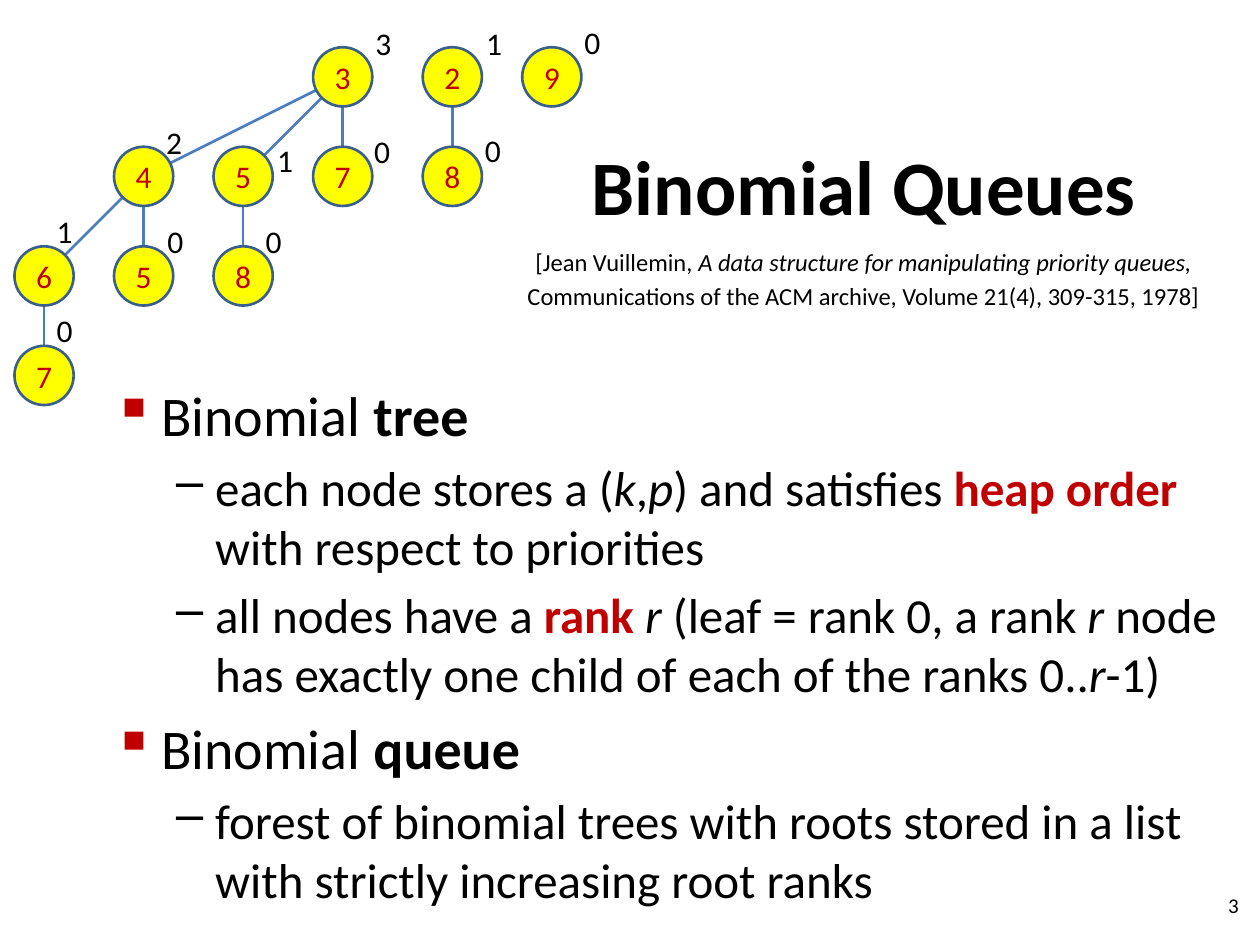
from collections import namedtuple
from dataclasses import dataclass

from lxml import etree
from pptx import Presentation
from pptx.dml.color import RGBColor
from pptx.enum.shapes import MSO_CONNECTOR, MSO_SHAPE
from pptx.enum.text import MSO_ANCHOR, PP_ALIGN
from pptx.oxml.ns import qn
from pptx.util import Inches, Pt

CIRCLE = MSO_SHAPE.OVAL
STRAIGHT = MSO_CONNECTOR.STRAIGHT
TOP, MIDDLE = MSO_ANCHOR.TOP, MSO_ANCHOR.MIDDLE
LEFT, CENTER, RIGHT = PP_ALIGN.LEFT, PP_ALIGN.CENTER, PP_ALIGN.RIGHT


@dataclass(frozen=True)
class Theme:
    font: str = "Calibri"
    ink: str = "000000"
    accent: str = "C00000"
    node_fill: str = "FFFF00"
    node_line: str = "3A5F8C"
    edge: str = "4B7EBC"
    stroke: float = 1.5
    title: int = 44
    body: tuple = (32, 28)
    small: int = 18
    citation: int = 14
    footer: int = 12


THEME = Theme()

# Tree grid: centre of the first cell, pitch, and extra room between trees
GRID_LEFT, GRID_TOP, PITCH, TREE_GAP = 0.35, 0.61, 0.79, 0.08
NODE_SIZE = 0.47
LABEL_SIZE = (0.31, 0.4)

# shift: from the node's centre to the corner of its rank label
Node = namedtuple("Node", "key rank column row parent shift")
SECOND_TREE = 4 + TREE_GAP / PITCH
NODES = {
    "root3": Node("3", 3, 3, 0, None, (0.16, -0.47)),
    "four": Node("4", 2, 1, 1, "root3", (0.08, -0.47)),
    "five": Node("5", 1, 2, 1, "root3", (0.17, -0.33)),
    "seven": Node("7", 0, 3, 1, "root3", (0.15, -0.4)),
    "six": Node("6", 1, 0, 2, "four", (0, -0.56)),
    "four_leaf": Node("5", 0, 1, 2, "four", (0.09, -0.48)),
    "five_leaf": Node("8", 0, 2, 2, "five", (0.08, -0.48)),
    "six_leaf": Node("7", 0, 0, 3, "six", (0, -0.56)),
    "root2": Node("2", 1, SECOND_TREE, 0, None, (0.17, -0.47)),
    "eight": Node("8", 0, SECOND_TREE, 1, "root2", (0.16, -0.41)),
    "root9": Node("9", 0, SECOND_TREE + 1, 0, None, (0.16, -0.48)),
}

# Each run is (text, style): b bold, i italic, a accent colour
CITATION = [
    [("[Jean Vuillemin, ", ""),
     ("A data structure for manipulating priority queues,", "i")],
    [("Communications of the ACM archive, Volume 21(4), 309-315, 1978]", "")],
]
BODY = [
    (0, [("Binomial ", ""), ("tree", "b")]),
    (1, [("each node stores a (", ""), ("k", "i"), (",", ""), ("p", "i"),
         (") and satisfies ", ""), ("heap order ", "ba"),
         ("with respect to priorities", "")]),
    (1, [("all nodes have a ", ""), ("rank ", "ba"), ("r ", "i"),
         ("(leaf = rank 0, a rank ", ""), ("r", "i"),
         (" node has exactly one child of each of the ranks 0..", ""),
         ("r", "i"), ("-1)", "")]),
    (0, [("Binomial ", ""), ("queue", "b")]),
    (1, [("forest of binomial trees with roots stored in a list "
          "with strictly increasing root ranks", "")]),
]
# Per level: bullet, its colour, left margin, hanging indent
BULLETS = [("▪", THEME.accent, 0.38, 0.38), ("–", THEME.ink, 0.81, 0.31)]


def color(value):
    return RGBColor.from_string(value)


def center(node):
    return GRID_LEFT + node.column * PITCH, GRID_TOP + node.row * PITCH


def write_para(para, runs, size, align=LEFT, tint=THEME.ink):
    para.alignment = align
    para.font.name, para.font.size = THEME.font, Pt(size)
    para.font.color.rgb = color(tint)
    for text, style in runs:
        span = para.add_run()
        span.text = text
        if "b" in style:
            span.font.bold = True
        if "i" in style:
            span.font.italic = True
        # Runs carry the colour themselves so that it always shows
        span.font.color.rgb = color(THEME.accent if "a" in style else tint)
        span.font.size, span.font.name = Pt(size), THEME.font


def add_text(page, place, paras, size, align=LEFT, anchor=TOP, wrap=True):
    box = page.shapes.add_textbox(*map(Inches, place))
    frame = box.text_frame
    frame.word_wrap, frame.vertical_anchor = wrap, anchor
    for index, runs in enumerate(paras):
        para = frame.add_paragraph() if index else frame.paragraphs[0]
        write_para(para, runs, size, align)
    return frame


def set_spacing(para):
    """Space before, as 20% of the line."""
    before = etree.SubElement(para._p.get_or_add_pPr(), qn("a:spcBef"))
    etree.SubElement(before, qn("a:spcPct"), val="20000")


def set_bullet(para, level):
    mark, tint, margin, hang = BULLETS[level]
    para.level = level
    props = para._p.get_or_add_pPr()
    props.set("marL", str(Inches(margin)))
    props.set("indent", str(-Inches(hang)))
    set_spacing(para)
    mark_color = etree.SubElement(props, qn("a:buClr"))
    etree.SubElement(mark_color, qn("a:srgbClr"), val=tint)
    etree.SubElement(props, qn("a:buChar"), char=mark)


def add_body(page, place):
    box = page.shapes.add_textbox(*map(Inches, place))
    frame = box.text_frame
    frame.word_wrap = True
    for index, (level, runs) in enumerate(BODY):
        para = frame.add_paragraph() if index else frame.paragraphs[0]
        set_bullet(para, level)
        write_para(para, runs, THEME.body[level])


def add_edge(page, child, parent):
    ends = map(Inches, center(child) + center(parent))
    edge = page.shapes.add_connector(STRAIGHT, *ends)
    edge.line.color.rgb, edge.line.width = color(THEME.edge), Pt(THEME.stroke)
    etree.SubElement(edge._element.spPr, qn("a:effectLst"))


def add_node(page, node):
    corner = [middle - NODE_SIZE / 2 for middle in center(node)]
    circle = page.shapes.add_shape(
        CIRCLE, *map(Inches, (*corner, NODE_SIZE, NODE_SIZE)))
    circle.shadow.inherit = False
    circle.fill.solid()
    circle.fill.fore_color.rgb = color(THEME.node_fill)
    circle.line.color.rgb = color(THEME.node_line)
    circle.line.width = Pt(THEME.stroke)
    frame = circle.text_frame
    frame.margin_left = frame.margin_right = 0
    frame.margin_top = frame.margin_bottom = 0
    frame.vertical_anchor = MIDDLE
    write_para(frame.paragraphs[0], [(node.key, "")], THEME.small, CENTER,
               THEME.accent)


def add_rank(page, node):
    corner = [middle + move for middle, move in zip(center(node), node.shift)]
    add_text(page, (*corner, *LABEL_SIZE), [[(str(node.rank), "")]],
             THEME.small, wrap=False)


def main():
    deck = Presentation()
    deck.slide_width, deck.slide_height = Inches(10), Inches(7.5)
    page = deck.slides.add_slide(deck.slide_layouts[6])

    # Title, body and citation
    add_text(page, (2.36, 0.84, 9, 1.25), [[("Binomial Queues", "b")]],
             THEME.title, CENTER, MIDDLE)
    add_body(page, (0.8, 2.97, 9, 4.95))
    citation = add_text(page, (2.09, 1.91, 9.53, 0.74), CITATION,
                        THEME.citation, CENTER)
    for para in citation.paragraphs:
        set_spacing(para)

    # Forest: edges behind, then nodes, then ranks
    for node in NODES.values():
        if node.parent:
            add_edge(page, node, NODES[node.parent])
    for node in NODES.values():
        add_node(page, node)
    for node in NODES.values():
        add_rank(page, node)

    # Page number
    add_text(page, (7.6, 6.98, 2.33, 0.4), [[("3", "")]], THEME.footer,
             RIGHT, MIDDLE)
    deck.save("out.pptx")


if __name__ == "__main__":
    main()
